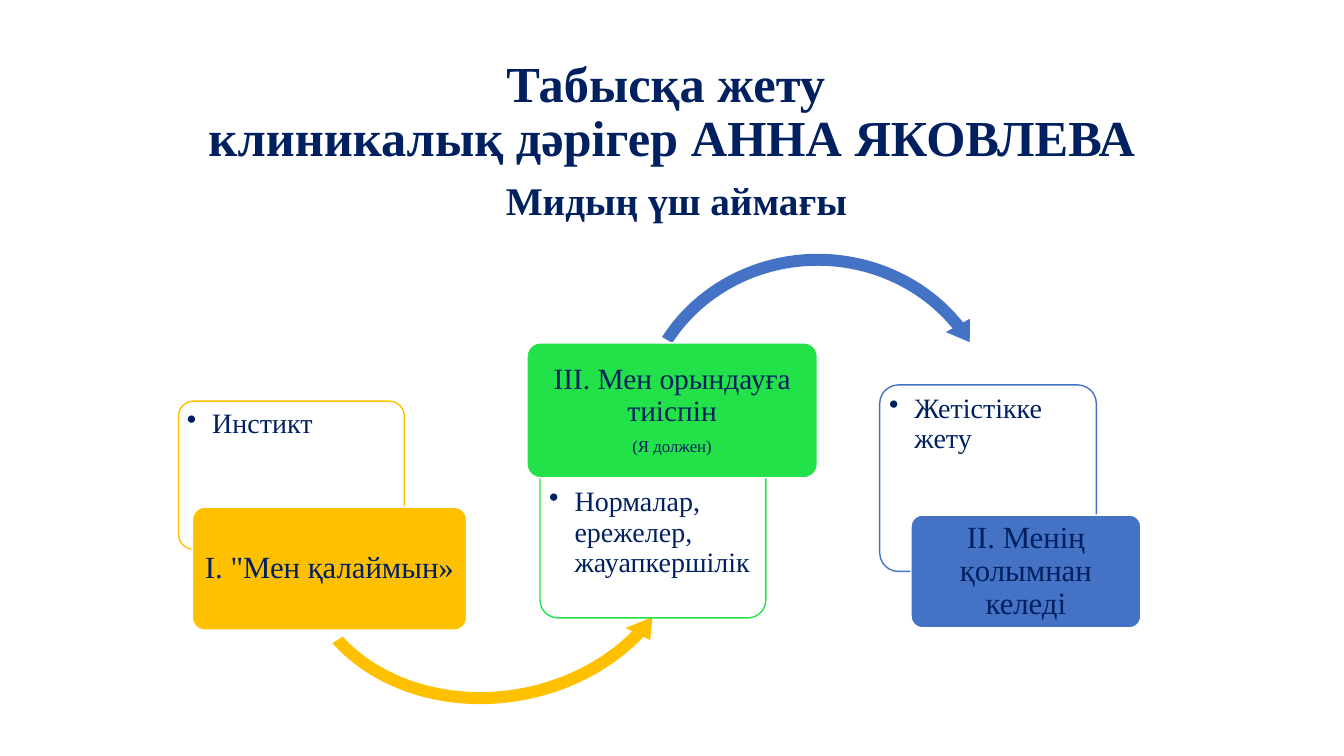
from lxml import etree
from pptx import Presentation
from pptx.dml.color import RGBColor
from pptx.enum.shapes import MSO_SHAPE
from pptx.enum.text import MSO_ANCHOR, MSO_AUTO_SIZE, PP_ALIGN
from pptx.oxml.ns import qn
from pptx.util import Cm, Pt

ROUNDED = MSO_SHAPE.ROUNDED_RECTANGLE
ARC_OVER = MSO_SHAPE.CIRCULAR_ARROW
ARC_UNDER = MSO_SHAPE.LEFT_CIRCULAR_ARROW
TOP, MIDDLE = MSO_ANCHOR.TOP, MSO_ANCHOR.MIDDLE
LEFT, CENTER = PP_ALIGN.LEFT, PP_ALIGN.CENTER
NO_AUTOFIT = MSO_AUTO_SIZE.NONE

NAVY = RGBColor(0x00, 0x20, 0x60)
WHITE = RGBColor(0xFF, 0xFF, 0xFF)
AMBER = RGBColor(0xFF, 0xC0, 0x00)
GREEN = RGBColor(0x23, 0xE1, 0x48)
BLUE = RGBColor(0x44, 0x72, 0xC4)
FONT = "Times New Roman"

TITLE_LINES = ["Табысқа жету ", "клиникалық дәрігер АННА ЯКОВЛЕВА"]
TITLE_BOX = (2.33, 1.01, 29.21, 3.68)
SUBTITLE = "Мидың үш аймағы"
SUBTITLE_BOX = (2.44, 4.44, 29.21, 1.4)

ZONES = [
    {
        "color": AMBER,
        "card": (4.5, 10.11, 5.69, 3.73), "note": "Инстикт", "note_top": 0.1,
        "label": (4.85, 12.78, 6.91, 3.1),
        "lines": [("I. \"Мен қалаймын»", 22)],
        "arrow": {"kind": ARC_UNDER, "box": (7.24, 9.25, 10.36, 8.66), "turn": 350,
                  "thickness": 3.5, "angles": (7.16, 43.27, 156.93), "head": 4},
    },
    {
        "color": GREEN,
        "card": (13.61, 11.1, 5.69, 4.47),
        "note": "Нормалар, ережелер, жауапкершілік", "note_top": 1.06,
        "label": (13.28, 8.64, 7.32, 3.4),
        "lines": [("ІІІ. Мен орындауға тиіспін", 21), ("(Я должен)", 12)],
        "arrow": {"kind": ARC_OVER, "box": (15.82, 6.2, 9.58, 9.12), "turn": 0,
                  "thickness": 3.3, "angles": (6.78, 324.06, 210.02), "head": 3.8,
                  "color": BLUE},
    },
    {
        "color": BLUE,
        "card": (22.17, 9.7, 5.46, 4.7), "note": "Жетістікке жету", "note_top": 0.1,
        "label": (22.96, 12.98, 5.79, 2.84),
        "lines": [("ІІ. Менің қолымнан келеді", 22)],
    },
]


def in_cm(box):
    """Turn a box given in centimetres into lengths."""
    return [Cm(value) for value in box]


def add_run(paragraph, text, size, bold=False):
    """Append one navy run to a paragraph."""
    run = paragraph.add_run()
    run.text = text
    run.font.name, run.font.size, run.font.bold = FONT, Pt(size), bold
    run.font.color.rgb = NAVY


def set_frame(frame, anchor, insets):
    """Set wrapping, anchor and insets of a text frame."""
    frame.word_wrap = True
    frame.auto_size = NO_AUTOFIT
    frame.vertical_anchor = anchor
    (frame.margin_left, frame.margin_top,
     frame.margin_right, frame.margin_bottom) = in_cm(insets)


def start_paragraph(paragraph, alignment):
    """Set the alignment and line spacing of a paragraph."""
    paragraph.alignment = alignment
    paragraph.line_spacing = 0.9
    return paragraph


def add_filled(slide, kind, box, fill):
    """Add a shape with a solid fill and no shadow."""
    shape = slide.shapes.add_shape(kind, *in_cm(box))
    shape.shadow.inherit = False
    shape.fill.solid()
    shape.fill.fore_color.rgb = fill
    return shape


def add_panel(slide, box, fill, outline):
    """Add a rounded panel with a thin outline."""
    panel = add_filled(slide, ROUNDED, box, fill)
    panel.adjustments[0] = 0.1
    panel.line.color.rgb = outline
    panel.line.width = Pt(1)
    return panel


def add_card(slide, zone):
    """Add the translucent card with its bulleted note."""
    card = add_panel(slide, zone["card"], WHITE, zone["color"])
    fill_color = card.fill._xPr.find(qn("a:solidFill"))[0]
    etree.SubElement(fill_color, qn("a:alpha"), val="90000")
    set_frame(card.text_frame, TOP, (0.1, zone["note_top"], 0.1, 0.1))
    note = start_paragraph(card.text_frame.paragraphs[0], LEFT)
    properties = note._p.get_or_add_pPr()
    properties.set("marL", str(Cm(0.64)))
    properties.set("indent", str(-Cm(0.64)))
    etree.SubElement(properties, qn("a:buChar"), char="•")
    add_run(note, zone["note"], 20)


def add_arrow(slide, zone):
    """Add the curved arrow that leads to the next zone."""
    arrow = zone["arrow"]
    arc = add_filled(slide, arrow["kind"], arrow["box"], arrow.get("color", zone["color"]))
    arc.line.fill.background()
    arc.rotation = arrow["turn"]
    settings = [arrow["thickness"] / 100,
                *(angle * 0.6 for angle in arrow["angles"]),
                arrow["head"] / 100]
    for index, value in enumerate(settings):
        arc.adjustments[index] = value


def add_label(slide, zone):
    """Add the coloured label of a zone."""
    label = add_panel(slide, zone["label"], zone["color"], WHITE)
    frame = label.text_frame
    set_frame(frame, MIDDLE, (0.12, 0.08, 0.12, 0.08))
    for index, (text, size) in enumerate(zone["lines"]):
        paragraph = frame.add_paragraph() if index else frame.paragraphs[0]
        start_paragraph(paragraph, CENTER).space_after = Pt(size * 0.35)
        add_run(paragraph, text, size)


def main():
    """Build the slide on the three zones of the brain."""
    deck = Presentation()
    deck.slide_width, deck.slide_height = Cm(33.87), Cm(19.05)
    slide = deck.slides.add_slide(deck.slide_layouts[5])

    title = slide.shapes.title
    title.left, title.top, title.width, title.height = in_cm(TITLE_BOX)
    set_frame(title.text_frame, MIDDLE, (0.25, 0.13, 0.25, 0.13))
    heading = start_paragraph(title.text_frame.paragraphs[0], CENTER)
    for index, line in enumerate(TITLE_LINES):
        if index:
            heading.add_line_break()
        add_run(heading, line, 36, bold=True)

    subtitle = slide.shapes.add_textbox(*in_cm(SUBTITLE_BOX))
    set_frame(subtitle.text_frame, TOP, (0.25, 0.13, 0.25, 0.13))
    add_run(start_paragraph(subtitle.text_frame.paragraphs[0], CENTER), SUBTITLE, 28, bold=True)

    for zone in ZONES:
        add_card(slide, zone)
        if "arrow" in zone:
            add_arrow(slide, zone)
        add_label(slide, zone)

    deck.save("out.pptx")


if __name__ == "__main__":
    main()
